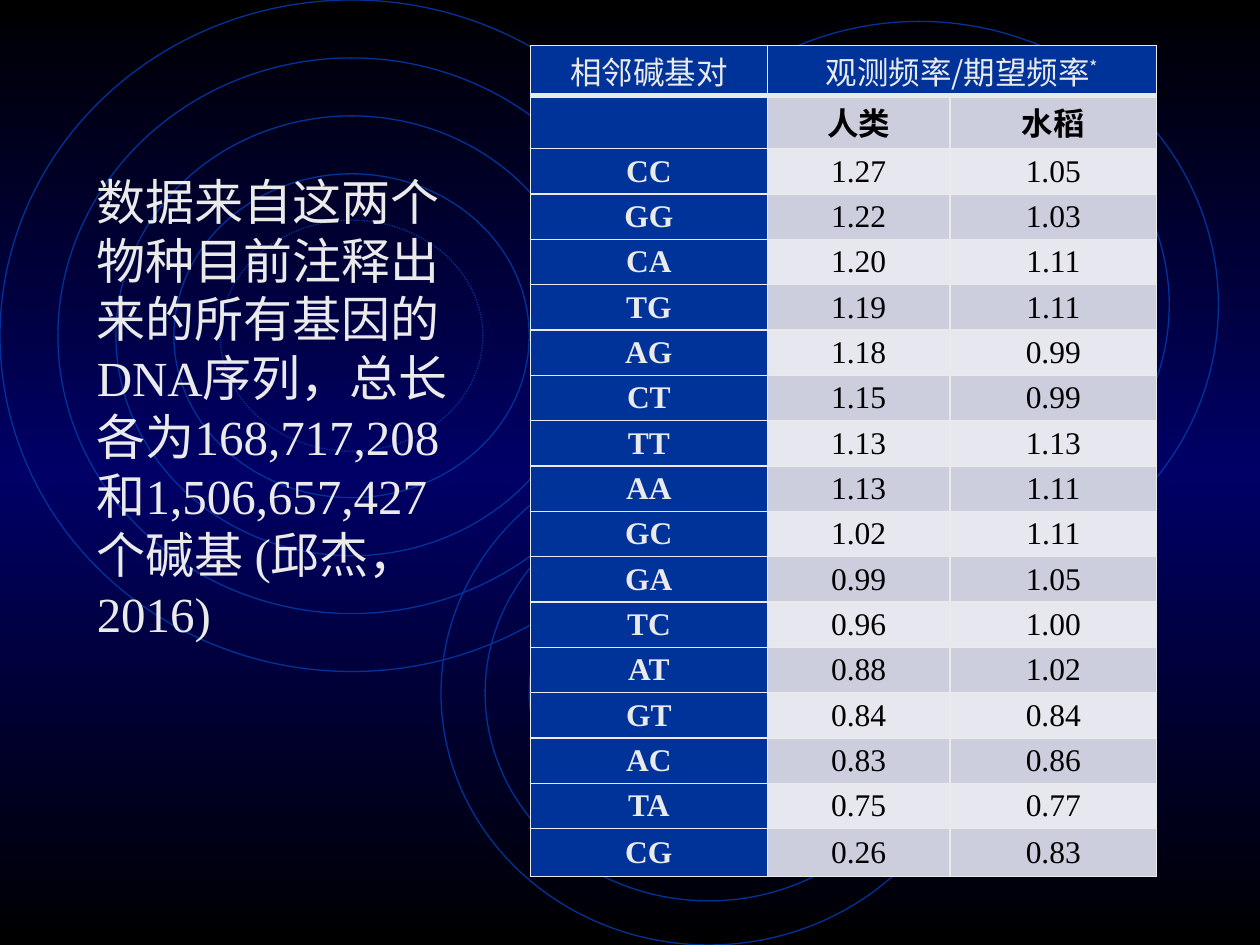
"""Build a slide comparing neighbouring base-pair frequencies in human and rice."""
from copy import deepcopy
from dataclasses import dataclass

from lxml.etree import SubElement
from pptx import Presentation
from pptx.dml.color import RGBColor
from pptx.enum.dml import MSO_LINE
from pptx.enum.shapes import MSO_SHAPE
from pptx.enum.text import MSO_ANCHOR, MSO_AUTO_SIZE, PP_ALIGN
from pptx.oxml.ns import qn
from pptx.util import Inches, Pt

COLORS = {
    "black": "000000", "navy": "000066", "blue": "003399",
    "light": "EAEAEA", "band_dark": "CCCEDE", "band_light": "E7E8EF",
}
LATIN, CJK = "Times New Roman", "Noto Sans CJK SC"
RING_STEPS = (0, 1, 2, 3, 3.8)
COL_WIDTHS = (1.88, 1.45, 1.64)
ROW_HEIGHTS = (0.4, 0.42, *[0.36] * 15, 0.38)
SPECIES = ("", "人类", "水稻")
RATIOS = (
    ("CC", "1.27", "1.05"), ("GG", "1.22", "1.03"), ("CA", "1.20", "1.11"),
    ("TG", "1.19", "1.11"), ("AG", "1.18", "0.99"), ("CT", "1.15", "0.99"),
    ("TT", "1.13", "1.13"), ("AA", "1.13", "1.11"), ("GC", "1.02", "1.11"),
    ("GA", "0.99", "1.05"), ("TC", "0.96", "1.00"), ("AT", "0.88", "1.02"),
    ("GT", "0.84", "0.84"), ("AC", "0.83", "0.86"), ("TA", "0.75", "0.77"),
    ("CG", "0.26", "0.83"),
)
SOURCE_NOTE = ("数据来自这两个物种目前注释出来的所有基因的DNA序列，总长各为"
               "168,717,208和1,506,657,427个碱基 (邱杰，2016)")


@dataclass(frozen=True)
class Ripple:
    """Concentric rings, given by the outermost ring and the gap between rings."""
    left: float
    top: float
    width: float
    height: float
    step: float


@dataclass(frozen=True)
class TextStyle:
    """Look of one run of text."""
    size: int = 18
    color: str = "light"
    latin: str = LATIN
    bold: bool = False
    baseline: int = 0


RIPPLES = (
    Ripple(0, 0, 5.58, 5.33, 0.46),
    Ripple(3.5, 3.5, 4.25, 4, 0.35),
    Ripple(4.92, 0.17, 4.75, 4.5, 0.39),
)
HEADER = TextStyle(latin=CJK)
MARK = TextStyle(latin=CJK, baseline=30)
SPECIES_NAME = TextStyle(color="black", latin=CJK, bold=True)
PAIR = TextStyle(bold=True)
VALUE = TextStyle(color="black")


def rgb(name: str) -> RGBColor:
    """Return a named colour."""
    return RGBColor.from_string(COLORS[name])


def set_background(slide) -> None:
    """Fade the slide from black to navy and back, top to bottom."""
    fill = slide.background.fill
    fill.gradient()
    fill.gradient_angle = 270
    stops = slide.element.find(f".//{qn('a:gsLst')}")
    stops.insert(1, deepcopy(stops[0]))
    for stop, name, position in zip(fill.gradient_stops, ("black", "navy", "black"), (0, 0.5, 1)):
        stop.color.rgb = rgb(name)
        stop.position = position


def add_ripple(slide, ripple: Ripple) -> None:
    """Draw one group of rings, the innermost dotted."""
    group = slide.shapes.add_group_shape()
    for k in RING_STEPS:
        inset = k * ripple.step
        sp = group.shapes.add_shape(
            MSO_SHAPE.OVAL, Inches(ripple.left + inset), Inches(ripple.top + inset),
            Inches(ripple.width - 2 * inset), Inches(ripple.height - 2 * inset))
        sp.shadow.inherit = False
        sp.fill.background()
        sp.line.color.rgb = rgb("blue")
        sp.line.width = Pt(0.75)
        if k == RING_STEPS[-1]:
            sp.line.dash_style = MSO_LINE.ROUND_DOT


def add_run(p, text: str, style: TextStyle) -> None:
    """Append a run with its Latin and East Asian fonts."""
    r = p.add_run()
    r.text = text
    r.font.size = Pt(style.size)
    r.font.bold = style.bold
    r.font.color.rgb = rgb(style.color)
    r.font.name = style.latin
    rPr = r._r.get_or_add_rPr()
    SubElement(rPr, qn("a:ea"), typeface=CJK)
    if style.baseline:
        rPr.set("baseline", str(style.baseline * 1000))


def set_borders(cell, top: float = 1, bottom: float = 1) -> None:
    """Outline a cell, with line widths in points."""
    tcPr = cell._tc.get_or_add_tcPr()
    for side, width in (("L", 1), ("R", 1), ("T", top), ("B", bottom)):
        ln = SubElement(tcPr, qn(f"a:ln{side}"), w=str(Pt(width)))
        SubElement(SubElement(ln, qn("a:solidFill")), qn("a:srgbClr"), val=COLORS["light"])


def fill_cell(cell, color: str, runs: list[tuple[str, TextStyle]]) -> None:
    """Fill a cell and centre its text."""
    cell.fill.solid()
    cell.fill.fore_color.rgb = rgb(color)
    cell.margin_left = cell.margin_right = Inches(0.07)
    cell.margin_top = cell.margin_bottom = 0
    cell.vertical_anchor = MSO_ANCHOR.MIDDLE
    p = cell.text_frame.paragraphs[0]
    p.alignment = PP_ALIGN.CENTER
    for text, style in runs:
        if text:
            add_run(p, text, style)


def add_ratio_table(slide) -> None:
    """Add the table of observed to expected frequencies."""
    table = slide.shapes.add_table(
        len(ROW_HEIGHTS), len(COL_WIDTHS), Inches(4.21), Inches(0.36),
        Inches(sum(COL_WIDTHS)), Inches(sum(ROW_HEIGHTS))).table
    for column, width in zip(table.columns, COL_WIDTHS):
        column.width = Inches(width)
    for row, height in zip(table.rows, ROW_HEIGHTS):
        row.height = Inches(height)

    table.cell(0, 1).merge(table.cell(0, 2))
    headers = ([("相邻碱基对", HEADER)], [("观测频率/期望频率", HEADER), ("*", MARK)], [])
    for j, runs in enumerate(headers):
        set_borders(table.cell(0, j), bottom=3)
        fill_cell(table.cell(0, j), "blue", runs)

    for i, values in enumerate((SPECIES, *RATIOS), start=1):
        band = "band_dark" if i % 2 else "band_light"
        for j, text in enumerate(values):
            style = SPECIES_NAME if i == 1 else VALUE if j else PAIR
            set_borders(table.cell(i, j), top=3 if i == 1 else 1)
            fill_cell(table.cell(i, j), band if j else "blue", [(text, style)])


def add_source_note(slide) -> None:
    """Add the note on where the data come from."""
    tf = slide.shapes.add_textbox(Inches(0.67), Inches(1.31), Inches(3.07), Inches(3.87)).text_frame
    tf.word_wrap = True
    tf.auto_size = MSO_AUTO_SIZE.SHAPE_TO_FIT_TEXT
    add_run(tf.paragraphs[0], SOURCE_NOTE, TextStyle(size=28))


def main() -> None:
    """Build and save the slide."""
    prs = Presentation()
    prs.slide_width, prs.slide_height = Inches(10), Inches(7.5)
    slide = prs.slides.add_slide(prs.slide_layouts[6])
    set_background(slide)
    for ripple in RIPPLES:
        add_ripple(slide, ripple)
    add_ratio_table(slide)
    add_source_note(slide)
    prs.save("out.pptx")


if __name__ == "__main__":
    main()
